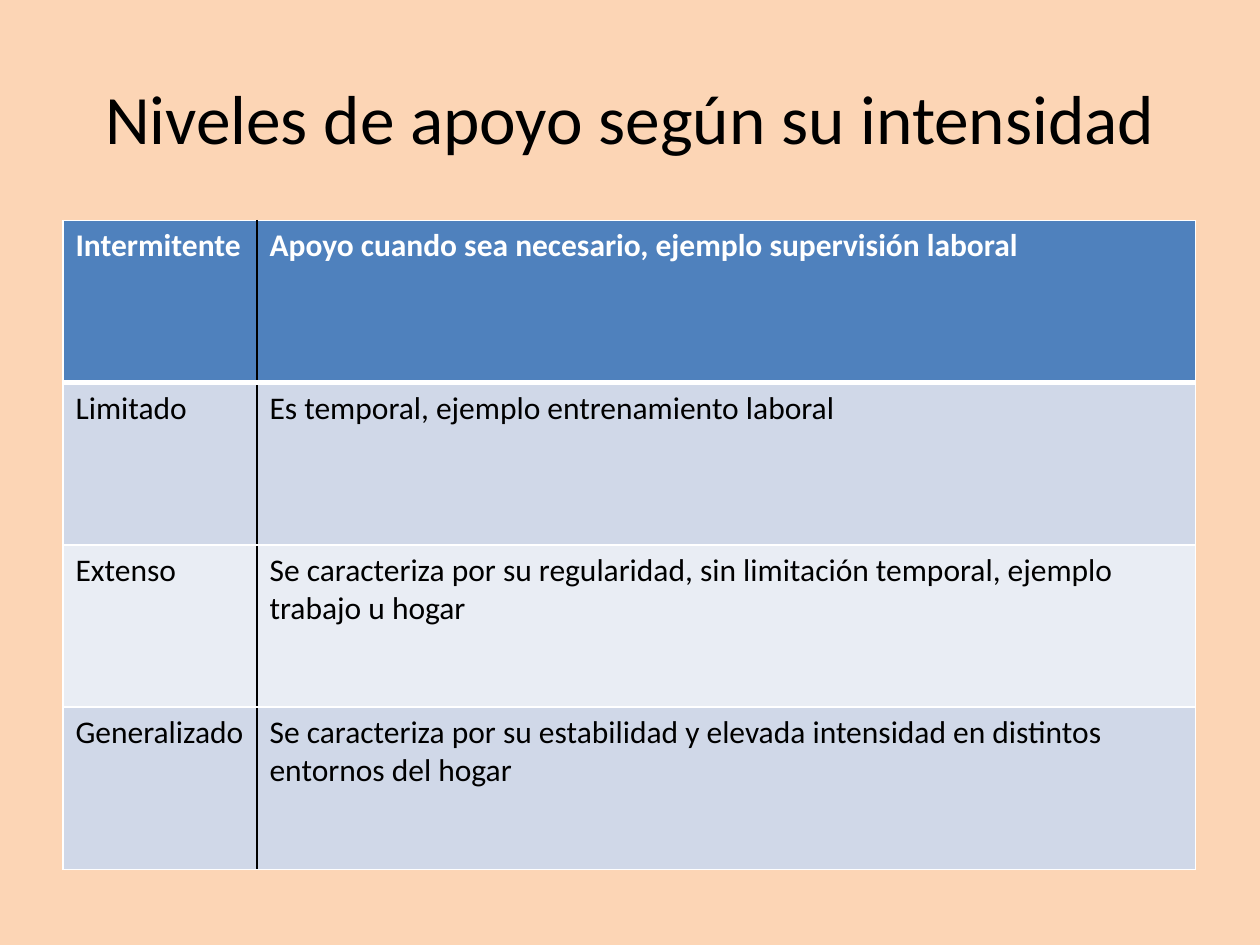
from pptx import Presentation
from pptx.dml.color import RGBColor
from pptx.enum.text import MSO_ANCHOR, PP_ALIGN
from pptx.oxml.ns import qn
from pptx.util import Inches, Pt
from lxml.etree import SubElement

PEACH = RGBColor(0xFC, 0xD5, 0xB5)
BLUE = RGBColor(0x4F, 0x81, 0xBD)
MIST = RGBColor(0xD0, 0xD8, 0xE8)
PALE = RGBColor(0xE9, 0xED, 0xF4)
BLACK = RGBColor(0, 0, 0)
WHITE = RGBColor(0xFF, 0xFF, 0xFF)

TITLE = "Niveles de apoyo según su intensidad"
LEVELS = [
    ("Intermitente", "Apoyo cuando sea necesario, ejemplo supervisión laboral"),
    ("Limitado", "Es temporal, ejemplo entrenamiento laboral"),
    ("Extenso", "Se caracteriza por su regularidad, sin limitación temporal, "
                "ejemplo trabajo u hogar"),
    ("Generalizado", "Se caracteriza por su estabilidad y elevada intensidad "
                     "en distintos entornos del hogar"),
]


def write(frame, text, font="Calibri", size=18, color=BLACK, bold=False,
          align=PP_ALIGN.LEFT, anchor=MSO_ANCHOR.TOP):
    frame.word_wrap = True
    frame.vertical_anchor = anchor
    para = frame.paragraphs[0]
    para.alignment = align
    run = para.add_run()
    run.text = text
    run.font.name = font
    run.font.size = Pt(size)
    run.font.bold = bold
    run.font.color.rgb = color


def edge(cell, side, color, width):
    props = cell._tc.get_or_add_tcPr()
    line = SubElement(props, qn("a:ln" + side), w=str(Pt(width)))
    fill = SubElement(line, qn("a:solidFill"))
    SubElement(fill, qn("a:srgbClr"), val=str(color))


class Deck:
    def __init__(self, font="Calibri"):
        self.font = font
        self.show = Presentation()
        self.show.slide_width = Inches(10)
        self.show.slide_height = Inches(7.5)
        self.slide = None

    def page(self, color):
        self.slide = self.show.slides.add_slide(self.show.slide_layouts[6])
        back = self.slide.background.fill
        back.solid()
        back.fore_color.rgb = color

    def title(self, text, x, y, w, h):
        box = self.slide.shapes.add_textbox(
            Inches(x), Inches(y), Inches(w), Inches(h))
        write(box.text_frame, text, font=self.font, size=39.6,
              align=PP_ALIGN.CENTER, anchor=MSO_ANCHOR.MIDDLE)

    def table(self, data, x, y, cols, h):
        grid = self.slide.shapes.add_table(
            len(data), len(cols), Inches(x), Inches(y),
            Inches(sum(cols)), Inches(h)).table
        for col, width in zip(grid.columns, cols):
            col.width = Inches(width)
        for r, texts in enumerate(data):
            grid.rows[r].height = Inches(h / len(data))
            for c, text in enumerate(texts):
                self.cell(grid.cell(r, c), text, r, c, len(cols) - 1)

    def cell(self, cell, text, row, col, last):
        head = row == 0
        edge(cell, "L", BLACK if col > 0 else WHITE, 1)
        edge(cell, "R", BLACK if col < last else WHITE, 1)
        edge(cell, "T", WHITE, 3 if row == 1 else 1)
        edge(cell, "B", WHITE, 3 if head else 1)
        cell.fill.solid()
        cell.fill.fore_color.rgb = BLUE if head else MIST if row % 2 else PALE
        write(cell.text_frame, text, font=self.font, bold=head,
              color=WHITE if head else BLACK)

    def save(self):
        self.show.save("out.pptx")


def main():
    deck = Deck()
    deck.page(PEACH)
    deck.title(TITLE, 0.5, 0.3, 9, 1.25)
    deck.table(LEVELS, 0.5, 1.75, (1.54, 7.45), 5.15)
    deck.save()


if __name__ == "__main__":
    main()
